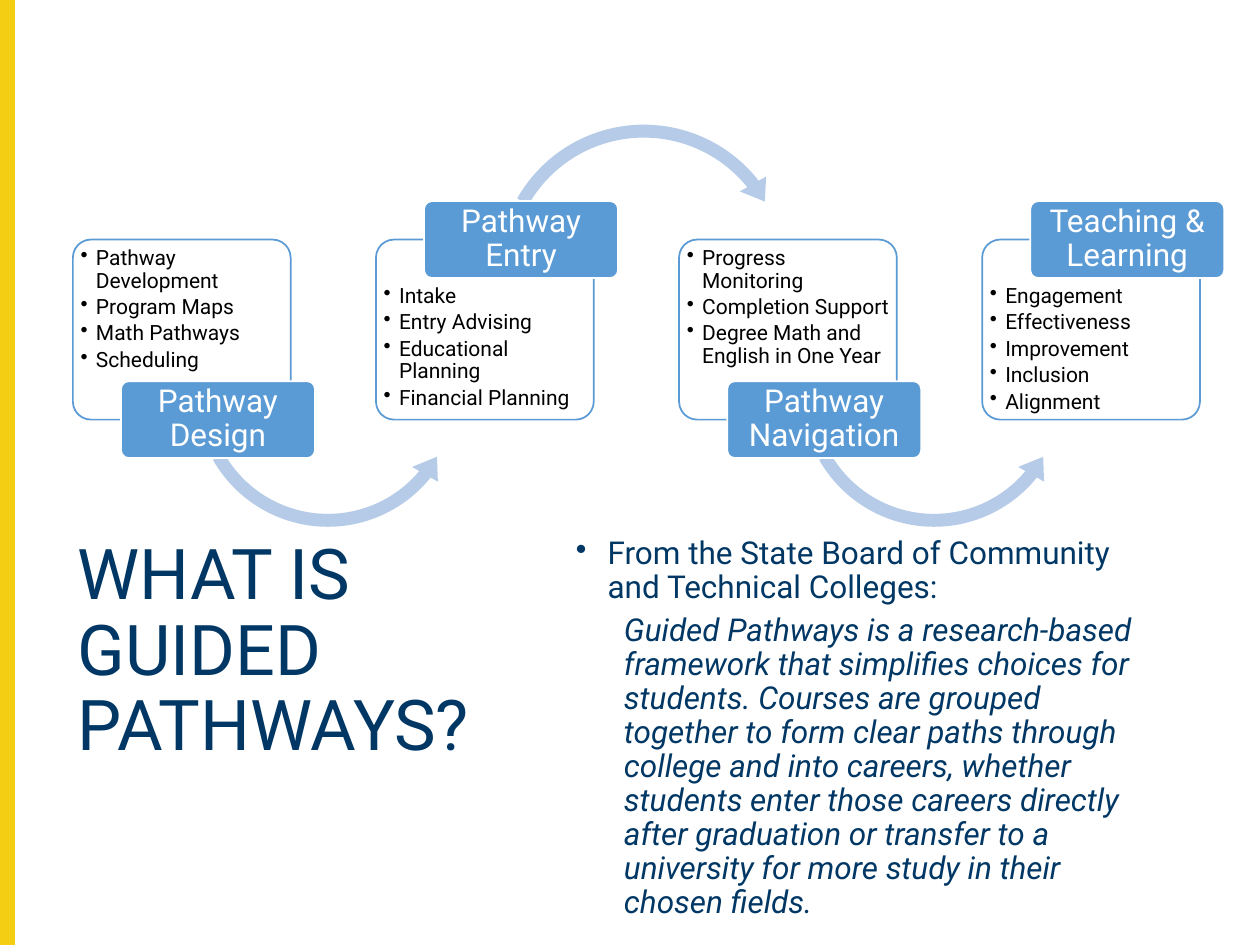
from dataclasses import dataclass

from lxml import etree
from pptx import Presentation
from pptx.dml.color import RGBColor
from pptx.enum.shapes import MSO_SHAPE
from pptx.enum.text import MSO_ANCHOR, MSO_AUTO_SIZE, PP_ALIGN
from pptx.oxml.ns import qn
from pptx.util import Cm, Pt

RECTANGLE = MSO_SHAPE.RECTANGLE
ROUNDED = MSO_SHAPE.ROUNDED_RECTANGLE
ARC_OVER = MSO_SHAPE.CIRCULAR_ARROW
ARC_UNDER = MSO_SHAPE.LEFT_CIRCULAR_ARROW
TOP = MSO_ANCHOR.TOP
MIDDLE = MSO_ANCHOR.MIDDLE
LEFT = PP_ALIGN.LEFT
CENTER = PP_ALIGN.CENTER
NO_AUTOFIT = MSO_AUTO_SIZE.NONE

FONT = "Roboto"
NAVY = "003764"
GOLD = "F4CE12"
BLUE = "5B9BD5"
PALE_BLUE = "B5CBE7"
WHITE = "FFFFFF"
BLACK = "000000"

FIRST_LEFT = 1.47
STEP_PITCH = 6.11
CARD_TOP, CARD_WIDTH, CARD_HEIGHT = 4.83, 4.39, 3.63
LABEL_OFFSET, LABEL_WIDTH, LABEL_HEIGHT = 0.97, 3.91, 1.55


@dataclass(frozen=True)
class Arc:
    preset: MSO_SHAPE
    offset: float
    top: float
    size: float
    adjustments: tuple[float, ...]


@dataclass(frozen=True)
class Step:
    label: str
    items: tuple[str, ...]
    label_above: bool
    arc: Arc | None = None


UNDER = Arc(ARC_UNDER, 2.31, 5.13, 5.66, (0.046, 5.822, 23.577, 90.245, 0.053))
OVER = Arc(ARC_OVER, 2.29, 2.34, 6.22, (0.042, 5.242, 193.002, 125.755, 0.049))

STEPS = (
    Step("Pathway Design",
         ("Pathway Development", "Program Maps", "Math Pathways", "Scheduling"),
         False, UNDER),
    Step("Pathway Entry",
         ("Intake", "Entry Advising", "Educational Planning", "Financial Planning"),
         True, OVER),
    Step("Pathway Navigation",
         ("Progress Monitoring", "Completion Support",
          "Degree Math and English in One Year"),
         False, UNDER),
    Step("Teaching & Learning",
         ("Engagement", "Effectiveness", "Improvement", "Inclusion", "Alignment"),
         True),
)


def color(value: str) -> RGBColor:
    return RGBColor.from_string(value)


def add_block(slide, preset: MSO_SHAPE, left: float, top: float, width: float,
              height: float, fill: str, line: str | None = None):
    block = slide.shapes.add_shape(preset, Cm(left), Cm(top), Cm(width), Cm(height))
    block.shadow.inherit = False
    block.fill.solid()
    block.fill.fore_color.rgb = color(fill)
    if line:
        block.line.color.rgb = color(line)
        block.line.width = Pt(1)
    else:
        block.line.fill.background()
    return block


def set_frame(frame, anchor: MSO_ANCHOR, margins: tuple[float, ...]) -> None:
    frame.word_wrap = True
    frame.auto_size = NO_AUTOFIT
    frame.vertical_anchor = anchor
    (frame.margin_left, frame.margin_top,
     frame.margin_right, frame.margin_bottom) = map(Cm, margins)


def write(paragraph, text: str, size: float, hue: str, align: PP_ALIGN = LEFT,
          italic: bool = False) -> None:
    paragraph.alignment = align
    paragraph.line_spacing = 0.9
    run = paragraph.add_run()
    run.text = text
    run.font.name = FONT
    run.font.size = Pt(size)
    run.font.italic = italic
    run.font.color.rgb = color(hue)


def indent(paragraph, left: float, bullet: bool = True) -> None:
    properties = paragraph._p.get_or_add_pPr()
    properties.set("marL", str(Cm(left)))
    properties.set("indent", str(-Cm(left) if bullet else 0))
    if bullet:
        etree.SubElement(properties, qn("a:buChar")).set("char", "•")
    else:
        etree.SubElement(properties, qn("a:buNone"))


def add_card(slide, left: float, step: Step) -> None:
    card = add_block(slide, ROUNDED, left, CARD_TOP, CARD_WIDTH, CARD_HEIGHT, WHITE, BLUE)
    card.adjustments[0] = 0.1
    fill_color = card.fill._xPr.find(qn("a:solidFill"))[0]
    etree.SubElement(fill_color, qn("a:alpha")).set("val", "90000")
    frame = card.text_frame
    set_frame(frame, TOP, (0.05, 0.82 if step.label_above else 0.05, 0, 0))
    for index, item in enumerate(step.items):
        paragraph = frame.add_paragraph() if index else frame.paragraphs[0]
        indent(paragraph, 0.31)
        paragraph.space_after = Pt(2.1)
        write(paragraph, item, 12, BLACK)


def add_arc(slide, left: float, arc: Arc) -> None:
    arrow = add_block(slide, arc.preset, left + arc.offset, arc.top,
                      arc.size, arc.size, PALE_BLUE)
    for index, value in enumerate(arc.adjustments):
        arrow.adjustments[index] = value


def add_label(slide, left: float, step: Step) -> None:
    edge = CARD_TOP if step.label_above else CARD_TOP + CARD_HEIGHT
    label = add_block(slide, ROUNDED, left + LABEL_OFFSET, edge - LABEL_HEIGHT / 2,
                      LABEL_WIDTH, LABEL_HEIGHT, BLUE, WHITE)
    label.adjustments[0] = 0.1
    set_frame(label.text_frame, MIDDLE, (0.1, 0.08, 0.1, 0.08))
    write(label.text_frame.paragraphs[0], step.label, 18, WHITE, CENTER)


def add_title(slide) -> None:
    title = slide.shapes.title
    title.left, title.top, title.width, title.height = map(Cm, (1.32, 10.74, 9.53, 7.37))
    set_frame(title.text_frame, TOP, (0.25, 0.13, 0.25, 0.13))
    write(title.text_frame.paragraphs[0], "WHAT IS GUIDED PATHWAYS?", 40, NAVY)


def add_definition(slide) -> None:
    definition = slide.shapes.add_textbox(Cm(11.43), Cm(10.74), Cm(11.81), Cm(7.37))
    frame = definition.text_frame
    set_frame(frame, TOP, (0.18, 0.1, 0.18, 0.1))
    attribution = frame.paragraphs[0]
    indent(attribution, 0.64)
    write(attribution, "From the State Board of Community and Technical Colleges:", 18, NAVY)
    quotation = frame.add_paragraph()
    indent(quotation, 0.97, bullet=False)
    quotation.space_before = Pt(5)
    write(quotation,
          "Guided Pathways is a research-based framework that simplifies choices for "
          "students. Courses are grouped together to form clear paths through college "
          "and into careers, whether students enter those careers directly after "
          "graduation or transfer to a university for more study in their chosen fields.",
          18, NAVY, italic=True)


def main() -> None:
    deck = Presentation()
    deck.slide_width, deck.slide_height = Cm(25.4), Cm(19.05)
    slide = deck.slides.add_slide(deck.slide_layouts[5])
    add_block(slide, RECTANGLE, 0, 0, 0.28, 19.05, GOLD, GOLD)
    add_title(slide)
    add_definition(slide)
    for index, step in enumerate(STEPS):
        left = FIRST_LEFT + index * STEP_PITCH
        add_card(slide, left, step)
        if step.arc:
            add_arc(slide, left, step.arc)
        add_label(slide, left, step)
    deck.save("out.pptx")


if __name__ == "__main__":
    main()
